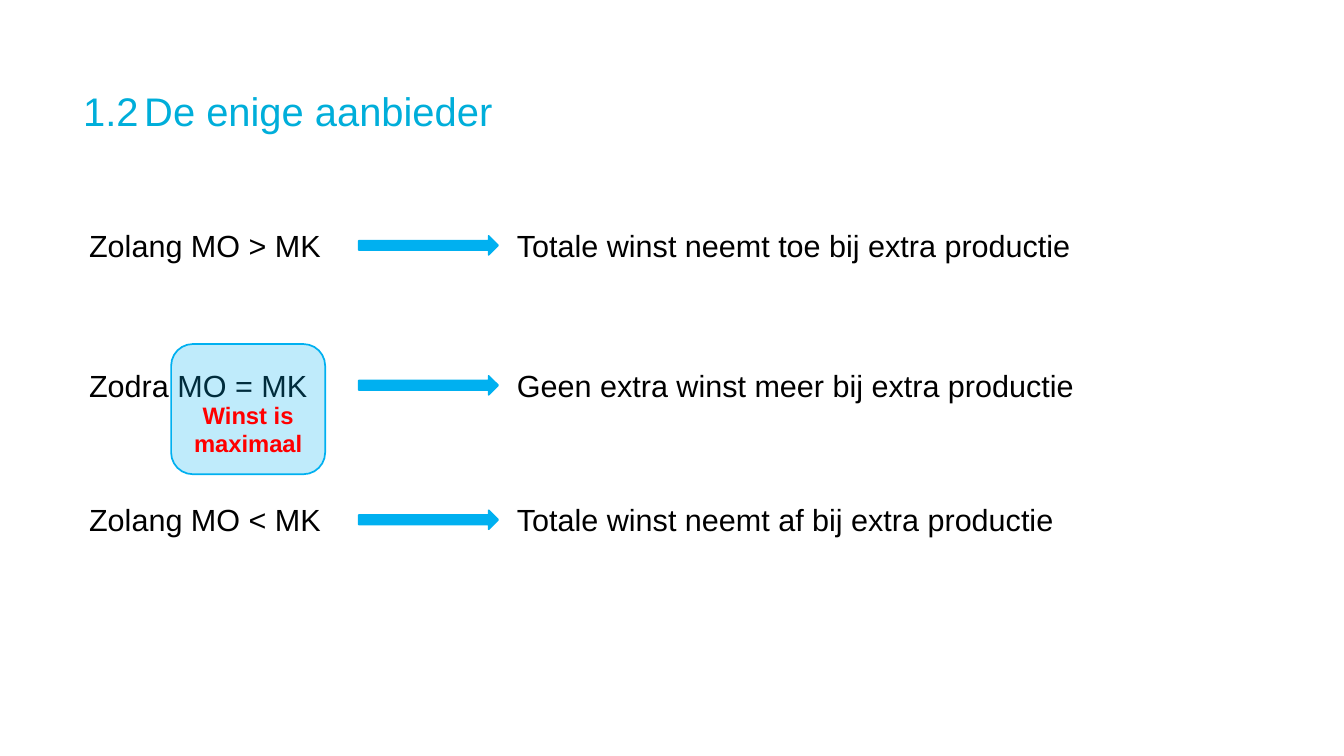
from dataclasses import dataclass

import lxml.etree
import pptx
import pptx.dml.color
import pptx.enum.shapes
import pptx.enum.text
import pptx.oxml.ns
import pptx.util

PX = 9144
SHAPES = pptx.enum.shapes.MSO_SHAPE
ANCHOR = pptx.enum.text.MSO_ANCHOR
ALIGN = pptx.enum.text.PP_ALIGN


@dataclass(frozen=True)
class Theme:
    font: str = "Arial"
    title_color: str = "00AEDA"
    text_color: str = "000000"
    accent: str = "00B0F0"
    highlight: str = "FF0000"
    title_size: int = 47
    text_size: int = 36
    note_size: int = 28
    line_width: int = 2
    note_opacity: int = 25


THEME = Theme()

RULES = [
    (366, "Zolang MO > MK", "Totale winst neemt toe bij extra productie"),
    (595, "Zodra MO = MK", "Geen extra winst meer bij extra productie"),
    (815, "Zolang MO < MK", "Totale winst neemt af bij extra productie"),
]


def px(*lengths):
    return [pptx.util.Emu(length * PX) for length in lengths]


def rgb(color):
    return pptx.dml.color.RGBColor.from_string(color)


def write_text(shape, text, *, size, color, bold=False, align=ALIGN.LEFT,
               anchor=ANCHOR.TOP, insets=(10, 5, 10, 5), tab=None):
    frame = shape.text_frame
    frame.word_wrap = True
    frame.vertical_anchor = anchor
    (frame.margin_left, frame.margin_top,
     frame.margin_right, frame.margin_bottom) = px(*insets)
    paragraph = frame.paragraphs[0]
    paragraph.alignment = align
    if tab:
        properties = paragraph._p.get_or_add_pPr()
        tabs = lxml.etree.SubElement(properties, pptx.oxml.ns.qn("a:tabLst"))
        lxml.etree.SubElement(tabs, pptx.oxml.ns.qn("a:tab"),
                              pos=str(tab * PX), algn="l")
    run = paragraph.add_run()
    run.text = text
    run.font.name = THEME.font
    run.font.size = pptx.util.Pt(size)
    run.font.bold = bold
    run.font.color.rgb = rgb(color)


def add_accent_shape(shapes, kind, box, opacity=100):
    shape = shapes.add_shape(kind, *px(*box))
    shape.shadow.inherit = False
    shape.fill.solid()
    shape.fill.fore_color.rgb = rgb(THEME.accent)
    if opacity < 100:
        color = shape.fill._xPr.find(".//" + pptx.oxml.ns.qn("a:srgbClr"))
        lxml.etree.SubElement(color, pptx.oxml.ns.qn("a:alpha"),
                              val=str(opacity * 1000))
    shape.line.color.rgb = rgb(THEME.accent)
    shape.line.width = pptx.util.Pt(THEME.line_width)
    return shape


def add_title(slide, box):
    title = slide.shapes.add_textbox(*px(*box))
    write_text(title, "1.2\tDe enige aanbieder", size=THEME.title_size,
               color=THEME.title_color, anchor=ANCHOR.MIDDLE,
               insets=(0, 0, 0, 0), tab=100)


def add_rule(slide, box, condition, outcome):
    left, top, width, height = box
    group = slide.shapes.add_group_shape()
    sentence = group.shapes.add_textbox(*px(left, top, width, height))
    write_text(sentence, f"{condition}\t{outcome}", size=THEME.text_size,
               color=THEME.text_color, tab=700)
    add_accent_shape(group.shapes, SHAPES.RIGHT_ARROW,
                     (left + 451, top + 20, 228, 31))


def add_maximum_note(slide, box):
    note = add_accent_shape(slide.shapes, SHAPES.ROUNDED_RECTANGLE, box,
                            THEME.note_opacity)
    write_text(note, "Winst is maximaal", size=THEME.note_size,
               color=THEME.highlight, bold=True, align=ALIGN.CENTER,
               anchor=ANCHOR.BOTTOM, insets=(10, 5, 10, 17))


def main():
    presentation = pptx.Presentation()
    presentation.slide_width, presentation.slide_height = px(2199, 1237)
    slide = presentation.slides.add_slide(presentation.slide_layouts[6])
    add_title(slide, (136, 136, 1925, 91))
    for top, condition, outcome in RULES:
        add_rule(slide, (136, top, 1680, 71), condition, outcome)
    add_maximum_note(slide, (280, 563, 252, 213))
    presentation.save("out.pptx")


if __name__ == "__main__":
    main()
